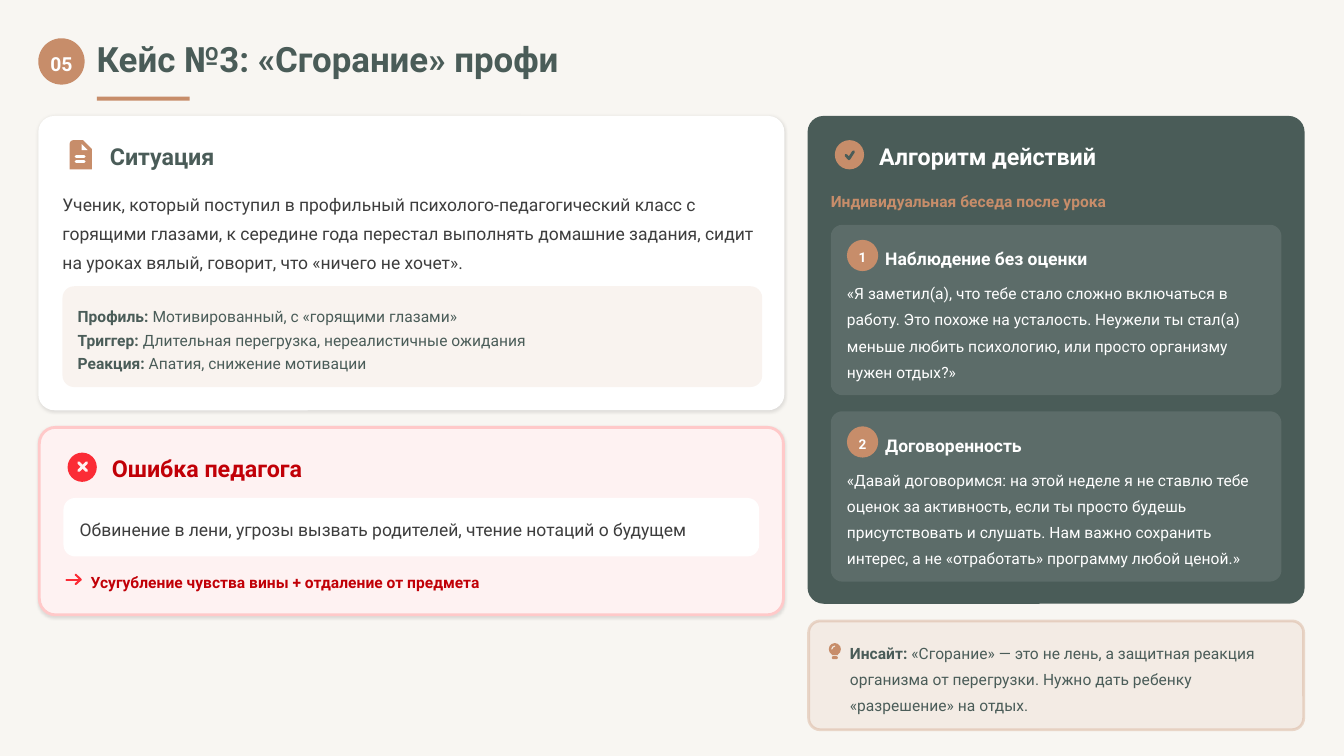
from dataclasses import dataclass

from lxml import etree
from pptx import Presentation
from pptx.dml.color import RGBColor
from pptx.enum.shapes import MSO_SHAPE
from pptx.enum.text import MSO_ANCHOR, PP_ALIGN
from pptx.oxml.ns import qn
from pptx.util import Inches, Pt

ROUND = MSO_SHAPE.ROUNDED_RECTANGLE
OVAL = MSO_SHAPE.OVAL
RECT = MSO_SHAPE.RECTANGLE
SNIP = MSO_SHAPE.SNIP_ROUND_RECTANGLE
WEDGE = MSO_SHAPE.RIGHT_TRIANGLE
MIDDLE = MSO_ANCHOR.MIDDLE
LEFT, CENTER = PP_ALIGN.LEFT, PP_ALIGN.CENTER

COLS, ROWS = 1333, 750
WIDTH, HEIGHT = Inches(13.33), Inches(7.5)


@dataclass(frozen=True)
class Theme:
    font: str = "Roboto"
    page: str = "F8F6F2"
    white: str = "FFFFFF"
    clay: str = "C78D6A"
    pine: str = "4A5C58"
    ink: str = "3D3D3D"
    blush: str = "FEF2F2"
    pink: str = "FFC9C9"
    red: str = "FB2C36"
    wine: str = "C10007"
    sand: str = "F3ECE4"
    title: float = 24.9
    head: float = 16.6
    badge: float = 13.8
    body: float = 12.5
    small: float = 11.1
    digit: float = 9.7


T = Theme()


def col(n):
    return round(WIDTH * n / COLS)


def row(n):
    return round(HEIGHT * n / ROWS)


def place(box):
    x, y, w, h = box
    return col(x), row(y), col(w), row(h)


def rgb(code):
    return RGBColor.from_string(code)


def fade(shape, share):
    tint = list(shape._element.spPr.iter(qn("a:srgbClr")))[-1]
    etree.SubElement(tint, qn("a:alpha"), val=str(share * 1000))


def shade(shape):
    effects = shape._element.spPr.find(qn("a:effectLst"))
    cast = etree.SubElement(effects, qn("a:outerShdw"), blurRad=str(Pt(2.1)),
                            dist=str(Pt(0.7)), dir="5400000", rotWithShape="0")
    tint = etree.SubElement(cast, qn("a:srgbClr"), val="000000")
    etree.SubElement(tint, qn("a:alpha"), val="10000")


def form(slide, kind, box, fill, share=100):
    shape = slide.shapes.add_shape(kind, *place(box))
    shape.shadow.inherit = False
    shape.fill.solid()
    shape.fill.fore_color.rgb = rgb(fill)
    if share < 100:
        fade(shape, share)
    shape.line.fill.background()
    return shape


def card(slide, box, fill, bend, share=100):
    shape = form(slide, ROUND, box, fill, share)
    shape.adjustments[0] = bend / min(box[2:])
    return shape


def edge(shape, tint, share=100):
    shape.line.color.rgb = rgb(tint)
    shape.line.width = Pt(2)
    if share < 100:
        fade(shape, share)


def stroke(slide, paths, tint, width):
    first, *rest = [[(col(x), row(y)) for x, y in path] for path in paths]
    pen = slide.shapes.build_freeform(*first[0])
    pen.add_line_segments(first[1:], close=False)
    for path in rest:
        pen.move_to(*path[0])
        pen.add_line_segments(path[1:], close=False)
    shape = pen.convert_to_shape()
    shape.shadow.inherit = False
    shape.fill.background()
    shape.line.color.rgb = rgb(tint)
    shape.line.width = Pt(width)
    shape._element.spPr.find(qn("a:ln")).set("cap", "rnd")


def write(shape, runs, size, tint, lead, align=LEFT):
    frame = shape.text_frame
    frame.word_wrap = True
    frame.vertical_anchor = MIDDLE
    frame.margin_left = frame.margin_right = 0
    frame.margin_top = frame.margin_bottom = 0
    para = frame.paragraphs[0]
    para.alignment = align
    para.line_spacing = lead
    for words, bold in runs:
        run = para.add_run()
        run.text = words
        run.font.name = T.font
        run.font.size = Pt(size)
        run.font.bold = bold
        run.font.color.rgb = rgb(tint)


def text(slide, box, runs, size, tint, lead=1.3):
    write(slide.shapes.add_textbox(*place(box)), runs, size, tint, lead)


def badge(slide, box, words, size):
    write(form(slide, OVAL, box, T.clay), [(words, True)], size, T.white, 1.2, CENTER)


def head(slide, x, y, words, tint):
    text(slide, (x, y, 300, 31), [(words, True)], T.head, tint, 1.1)


def page(slide):
    slide.background.fill.solid()
    slide.background.fill.fore_color.rgb = rgb(T.page)
    badge(slide, (38, 38, 46, 46), "05", T.badge)
    text(slide, (96, 42, 500, 38), [("Кейс №3: «Сгорание» профи", True)],
         T.title, T.pine, 0.9)
    form(slide, RECT, (96, 96, 92, 4), T.clay)


def story(slide):
    shade(card(slide, (38, 115, 740, 292), T.white, 16))
    sheet = form(slide, SNIP, (69, 139, 22, 29), T.clay)
    sheet.adjustments[0] = 0.17
    sheet.adjustments[1] = 0.4
    form(slide, WEDGE, (81, 143, 6, 6), T.white)
    stroke(slide, [[(75.5, y), (83.5, y)] for y in (155.5, 160.5)], T.white, 2)
    head(slide, 109, 138, "Ситуация", T.pine)
    text(slide, (62, 185, 703, 85), [(
        "Ученик, который поступил в профильный психолого-педагогический класс с "
        "горящими глазами, к середине года перестал выполнять домашние задания, "
        "сидит на уроках вялый, говорит, что «ничего не хочет».", False)],
        T.body, T.ink, 1.4)
    card(slide, (62, 284, 694, 100), T.clay, 11.5, 10)
    facts = [("Профиль:", " Мотивированный, с «горящими глазами»"),
             ("Триггер:", " Длительная перегрузка, нереалистичные ожидания"),
             ("Реакция:", " Апатия, снижение мотивации")]
    for i, (name, fact) in enumerate(facts):
        text(slide, (77, 300 + 23 * i, 671, 23), [(name, True), (fact, False)],
             T.small, T.pine)


def error(slide):
    panel = card(slide, (39, 424, 738, 186), T.blush, 16)
    edge(panel, T.pink)
    shade(panel)
    form(slide, OVAL, (67, 449, 29, 29), T.red)
    stroke(slide, [[(78, 459), (86, 467)], [(86, 459), (78, 467)]], T.blush, 2)
    head(slide, 111, 448, "Ошибка педагога", T.wine)
    card(slide, (63, 494, 690, 58), T.white, 11.5)
    text(slide, (79, 509, 668, 27), [(
        "Обвинение в лени, угрозы вызвать родителей, чтение нотаций о будущем",
        False)], T.body, T.ink)
    stroke(slide, [[(66, 575), (80, 575)], [(75, 570), (80, 575), (75, 579.5)]],
           T.red, 1.5)
    text(slide, (90, 563, 420, 23), [
        ("Усугубление чувства вины + отдаление от предмета", True)], T.small, T.wine)


def step(slide, top, digit, name, words):
    card(slide, (824, top, 447, 169), T.white, 11.5, 10)
    badge(slide, (840, top + 15, 31, 31), digit, T.digit)
    text(slide, (878, top + 17, 300, 27), [(name, True)], T.body, T.white)
    text(slide, (840, top + 53.5, 425, 100), [(words, False)], T.small, T.white, 1.4)


def plan(slide):
    card(slide, (801, 115, 493, 484), T.pine, 16)
    form(slide, OVAL, (828, 139, 29, 29), T.clay)
    stroke(slide, [[(839, 154), (842, 157.5), (846.5, 150.5)]], T.pine, 2)
    head(slide, 872, 138, "Алгоритм действий", T.white)
    text(slide, (824, 185, 455, 23), [("Индивидуальная беседа после урока", True)],
         T.small, T.clay)
    steps = [("Наблюдение без оценки",
              "«Я заметил(а), что тебе стало сложно включаться в работу. Это похоже "
              "на усталость. Неужели ты стал(а) меньше любить психологию, или просто "
              "организму нужен отдых?»"),
             ("Договоренность",
              "«Давай договоримся: на этой неделе я не ставлю тебе оценок за "
              "активность, если ты просто будешь присутствовать и слушать. Нам важно "
              "сохранить интерес, а не «отработать» программу любой ценой.»")]
    for i, (name, words) in enumerate(steps):
        step(slide, 223 + 185 * i, str(i + 1), name, words)


def insight(slide):
    edge(card(slide, (802, 616, 491, 108), T.clay, 11.5, 10), T.clay, 30)
    form(slide, OVAL, (822, 638, 12, 12), T.clay)
    form(slide, RECT, (825, 647, 6, 3), T.clay)
    card(slide, (825, 651, 6, 3), T.clay, 1.5)
    stroke(slide, [[(825, 644), (826, 642), (828, 641)]], T.sand, 0.75)
    text(slide, (843, 633, 444, 75), [
        ("Инсайт:", True),
        (" «Сгорание» — это не лень, а защитная реакция организма от перегрузки. "
         "Нужно дать ребенку «разрешение» на отдых.", False)], T.small, T.pine, 1.4)


def main():
    deck = Presentation()
    deck.slide_width, deck.slide_height = WIDTH, HEIGHT
    slide = deck.slides.add_slide(deck.slide_layouts[6])
    for part in (page, story, error, plan, insight):
        part(slide)
    deck.save("out.pptx")


if __name__ == "__main__":
    main()
